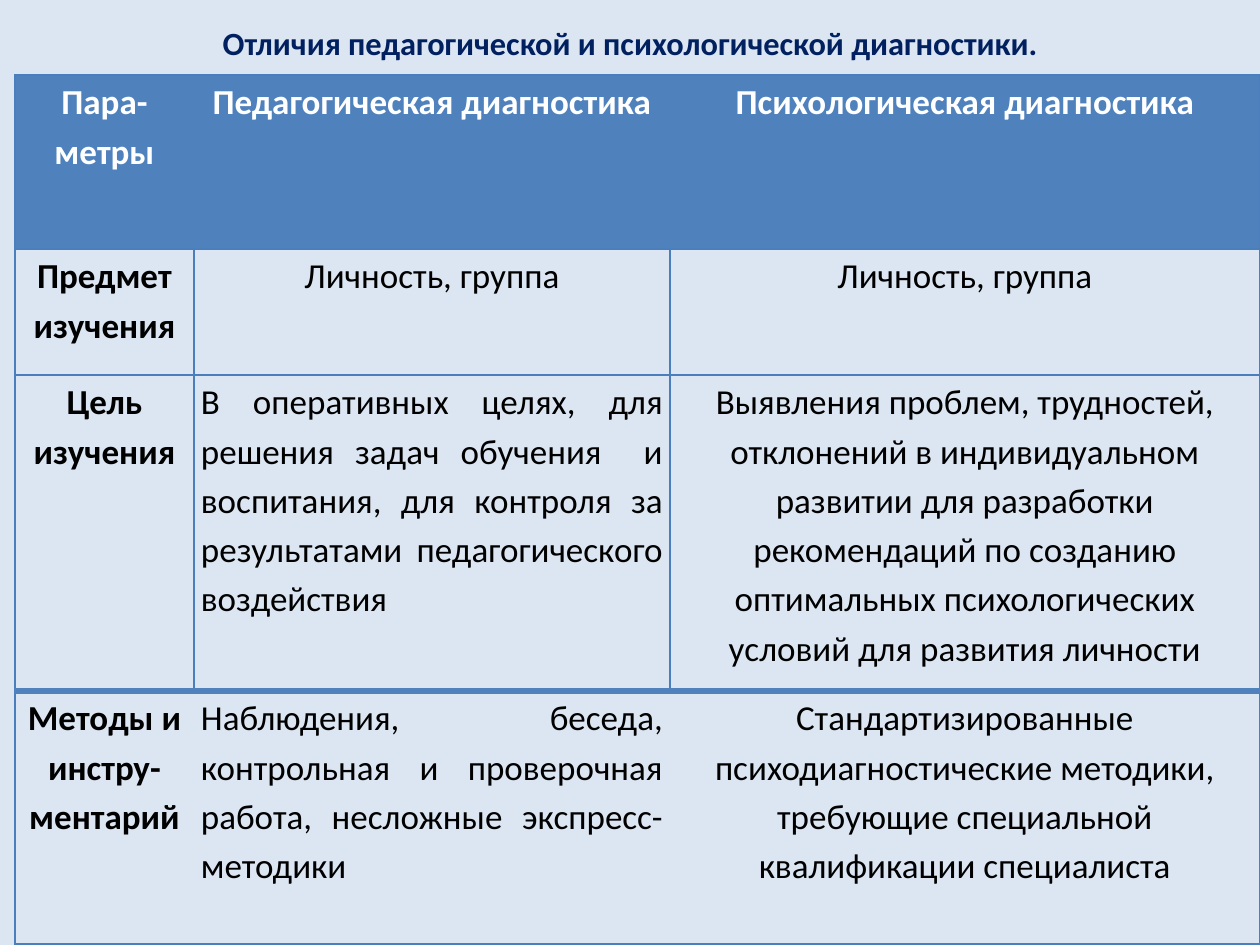
from dataclasses import dataclass

from lxml import etree
from pptx import Presentation
from pptx.dml.color import RGBColor
from pptx.enum.text import MSO_ANCHOR, PP_ALIGN
from pptx.oxml.ns import qn
from pptx.slide import Slide
from pptx.util import Emu, Pt

CENTER, JUSTIFY = PP_ALIGN.CENTER, PP_ALIGN.JUSTIFY
MIDDLE = MSO_ANCHOR.MIDDLE
PX_PER_INCH = 126
PLAIN_TABLE = "{2D5ABB26-0587-4C30-8999-92F81FD0307C}"

TITLE = "Отличия педагогической и психологической диагностики."
ROWS = [
    ["Пара-метры", "Педагогическая диагностика", "Психологическая диагностика"],
    ["Предмет изучения", "Личность, группа", "Личность, группа"],
    [
        "Цель изучения",
        "В оперативных целях, для решения задач обучения  и воспитания, "
        "для контроля за результатами педагогического воздействия",
        "Выявления проблем, трудностей, отклонений в индивидуальном развитии "
        "для разработки рекомендаций по созданию оптимальных психологических "
        "условий для развития личности",
    ],
    [
        "Методы и инстру-ментарий",
        "Наблюдения, беседа, контрольная и проверочная работа, "
        "несложные экспресс- методики",
        "Стандартизированные психодиагностические методики, "
        "требующие специальной квалификации специалиста",
    ],
]
COLUMN_WIDTHS = [179, 476, 590]
ROW_HEIGHTS = [174, 126, 316, 253]


def px(length):
    return Emu(round(length * 914400 / PX_PER_INCH))


def color(code):
    return RGBColor.from_string(code)


@dataclass
class Page:
    """Style of the deck and the slide being filled."""

    slide: Slide
    font: str = "Calibri"
    paper: str = "DCE6F2"
    title_color: str = "002060"
    header: str = "4F81BD"
    grid: str = "4B7EBC"
    thin: float = 0.75
    thick: float = 4

    def background(self):
        fill = self.slide.background.fill
        fill.solid()
        fill.fore_color.rgb = color(self.paper)

    def set_text(self, frame, text, size, code, bold, align=CENTER):
        frame.text = text
        frame.word_wrap = True
        para = frame.paragraphs[0]
        para.alignment = align
        font = para.font
        font.name, font.size, font.bold = self.font, Pt(size), bold
        font.color.rgb = color(code)
        return para

    def title(self, text, left, top, width, height):
        box = self.slide.shapes.title
        box.left, box.top, box.width, box.height = map(px, (left, top, width, height))
        frame = box.text_frame
        frame.margin_top = frame.margin_bottom = 0
        frame.vertical_anchor = MIDDLE
        self.set_text(frame, text, 18.5, self.title_color, True)

    def border(self, cell, side, code, width):
        line = etree.SubElement(
            cell._tc.get_or_add_tcPr(), qn(f"a:ln{side}"), w=str(Pt(width))
        )
        fill = etree.SubElement(line, qn("a:solidFill"))
        etree.SubElement(fill, qn("a:srgbClr"), val=code)

    def borders(self, cell, row, column, last_row, last_column):
        inner = 0 < row < last_row
        if inner or column == 0:
            self.border(cell, "L", self.grid, self.thin)
        if inner or column == last_column:
            self.border(cell, "R", self.grid, self.thin)
        if row == last_row:
            self.border(cell, "T", self.header, self.thick)
        else:
            self.border(cell, "T", self.grid, self.thin)
        if row == last_row - 1:
            self.border(cell, "B", self.header, self.thick)
        else:
            self.border(cell, "B", self.grid, self.thin)

    def table(self, rows, left, top, widths, heights):
        box = self.slide.shapes.add_table(
            len(rows), len(widths),
            px(left), px(top), px(sum(widths)), px(sum(heights)),
        )
        table = box.table
        table._tbl.tblPr.find(qn("a:tableStyleId")).text = PLAIN_TABLE
        table.horz_banding = False
        for column, width in zip(table.columns, widths):
            column.width = px(width)
        for row, height in zip(table.rows, heights):
            row.height = px(height)
        for r, texts in enumerate(rows):
            for c, text in enumerate(texts):
                cell = table.cell(r, c)
                cell.margin_left = cell.margin_right = px(7)
                cell.margin_top = cell.margin_bottom = 0
                self.borders(cell, r, c, len(rows) - 1, len(widths) - 1)
                if r == 0:
                    cell.fill.solid()
                    cell.fill.fore_color.rgb = color(self.header)
                else:
                    cell.fill.background()
                para = self.set_text(
                    cell.text_frame, text, 20,
                    "FFFFFF" if r == 0 else "000000",
                    r == 0 or c == 0,
                    JUSTIFY if r > 1 and c == 1 else CENTER,
                )
                para.line_spacing = 1.15


def main():
    deck = Presentation()
    deck.slide_width, deck.slide_height = px(1260), px(945)
    page = Page(deck.slides.add_slide(deck.slide_layouts[5]))
    page.background()
    page.title(TITLE, 0, 20, 1260, 46)
    page.table(ROWS, 15, 75, COLUMN_WIDTHS, ROW_HEIGHTS)
    deck.save("out.pptx")


if __name__ == "__main__":
    main()
